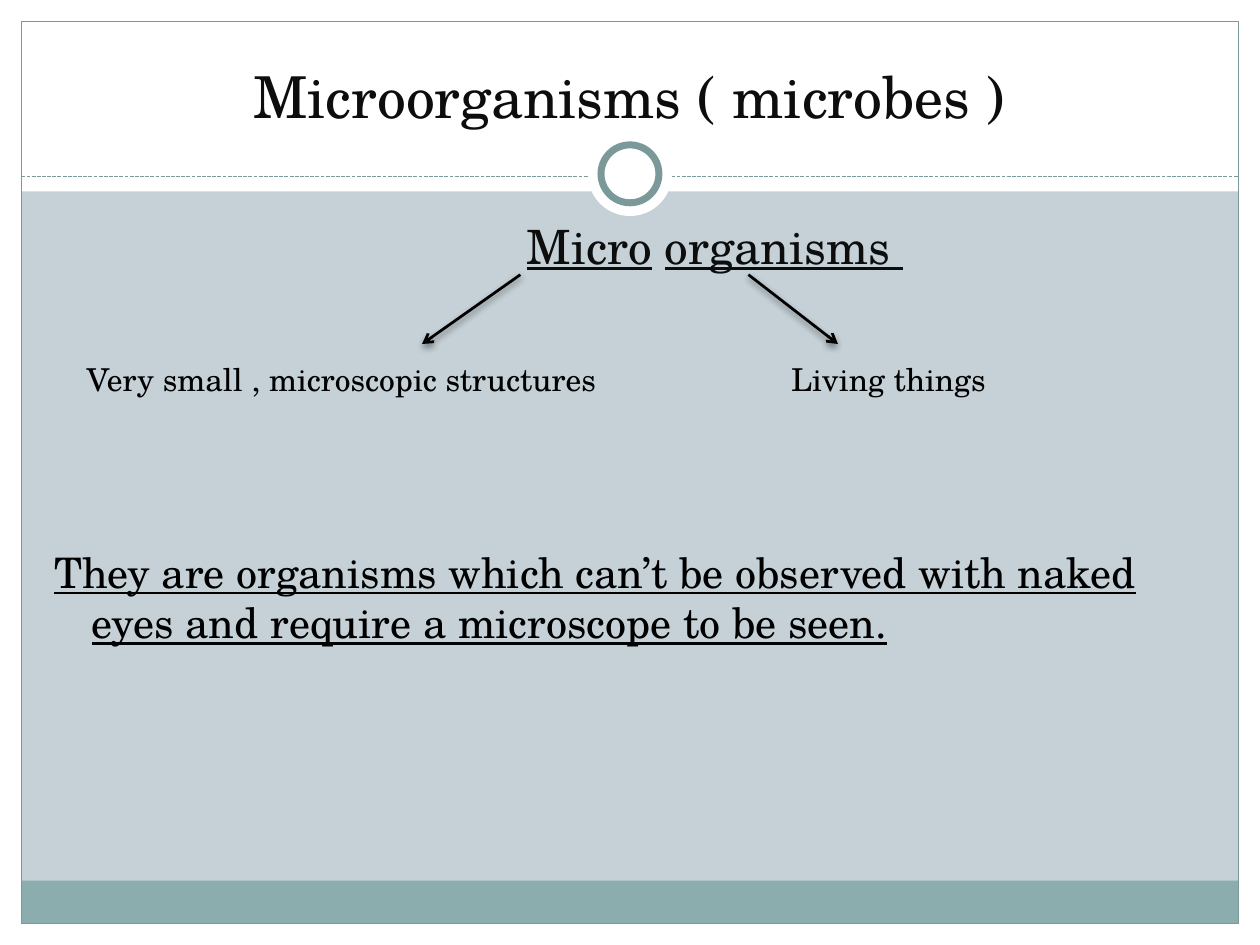
"""Build the slide that explains the word microorganisms."""
import pptx
import pptx.util
import pptx.dml.color
import pptx.enum.dml
import pptx.enum.shapes
import pptx.enum.text
import pptx.oxml
import pptx.oxml.ns

Inches, Pt = pptx.util.Inches, pptx.util.Pt
RGBColor = pptx.dml.color.RGBColor
SHAPE = pptx.enum.shapes.MSO_SHAPE
ANCHOR = pptx.enum.text.MSO_ANCHOR
ALIGN = pptx.enum.text.PP_ALIGN

WHITE = RGBColor(0xFF, 0xFF, 0xFF)
BLACK = RGBColor(0x00, 0x00, 0x00)
INK = RGBColor(0x0D, 0x0D, 0x0D)
SKY = RGBColor(0xC5, 0xD1, 0xD7)
TEAL = RGBColor(0x8C, 0xAD, 0xAE)
EDGE = RGBColor(0x7C, 0x99, 0x9A)
FONT = "TeX Gyre Schola"

WIDTH, HEIGHT, MARGIN = 10, 7.5, 0.17
HEADER, FOOTER, RULE_Y, RING_Y = 1.52, 0.34, 1.4, 1.38
HALO, RING = 0.67, 0.46

TITLE = "Microorganisms ( microbes )"
TITLE_AT = (0.33, 0.25, 9.33, 0.83)
BODY_AT = (0.33, 1.67, 9.3, 5)
# text, underlined
WORD = [("Micro", True), (" ", False), ("organisms ", True)]
DEFINITION = [("They are organisms which can’t be observed with naked eyes "
               "and require a microscope to be seen.", True)]
# runs, size, colour, left margin, first-line indent, space before
BODY = [
    (WORD, 27, INK, 3.75, 0, 0),
    (DEFINITION, 24, BLACK, 0.3, -0.3, 156),
]
# label, left, width, arrow start, arrow end
MEANINGS = [
    ("Very small , microscopic structures", 0.59, 4.33, 4.13, 3.35),
    ("Living things", 6.18, 2.28, 5.94, 6.65),
]
ARROW_TOP, ARROW_BOTTOM, LABEL_TOP, LABEL_HEIGHT = 2.18, 2.73, 2.81, 0.4

NAMESPACE = pptx.oxml.ns.nsdecls("a")
NO_EFFECT = f"<a:effectLst {NAMESPACE}/>"
SHADOW = (f'<a:effectLst {NAMESPACE}><a:outerShdw blurRad="{Pt(4)}" dist="{Pt(2)}" '
          'dir="5400000" rotWithShape="0"><a:srgbClr val="000000">'
          '<a:alpha val="45000"/></a:srgbClr></a:outerShdw></a:effectLst>')
ARROWHEAD = f'<a:tailEnd {NAMESPACE} type="arrow"/>'
NO_BULLET = f"<a:buNone {NAMESPACE}/>"


def add_xml(parent, xml):
    parent.append(pptx.oxml.parse_xml(xml))


def place(box, area):
    box.left, box.top, box.width, box.height = map(Inches, area)


def add_panel(page, kind, area, fill=None, line_width=None):
    panel = page.shapes.add_shape(kind, *map(Inches, area))
    panel.shadow.inherit = False
    if fill is None:
        panel.fill.background()
    else:
        panel.fill.solid()
        panel.fill.fore_color.rgb = fill
    if line_width is None:
        panel.line.fill.background()
    else:
        panel.line.color.rgb = EDGE
        panel.line.width = Pt(line_width)


def add_line(page, start, end, color, width, effect):
    line = page.shapes.add_connector(
        pptx.enum.shapes.MSO_CONNECTOR.STRAIGHT, *map(Inches, start + end))
    line.line.color.rgb = color
    line.line.width = Pt(width)
    add_xml(line._element.spPr, effect)
    return line


def add_span(para, text, size, color, underline=False):
    span = para.add_run()
    span.text = text
    span.font.name = FONT
    span.font.size = Pt(size)
    span.font.color.rgb = color
    span.font.underline = underline


def set_frame(box, anchor):
    frame = box.text_frame
    frame.word_wrap = True
    frame.auto_size = pptx.enum.text.MSO_AUTO_SIZE.NONE
    frame.vertical_anchor = anchor
    return frame


def draw_backdrop(page):
    page.background.fill.solid()
    page.background.fill.fore_color.rgb = SKY
    inner_width, inner_height = WIDTH - 2 * MARGIN, HEIGHT - 2 * MARGIN
    bottom = HEIGHT - MARGIN
    for area in [(0, bottom, WIDTH, MARGIN), (0, 0, WIDTH, HEADER),
                 (0, 0, MARGIN, HEIGHT), (WIDTH - MARGIN, 0, MARGIN, HEIGHT)]:
        add_panel(page, SHAPE.RECTANGLE, area, WHITE)
    add_panel(page, SHAPE.RECTANGLE, (MARGIN, bottom - FOOTER, inner_width, FOOTER), TEAL)
    add_panel(page, SHAPE.RECTANGLE, (MARGIN, MARGIN, inner_width, inner_height), None, 0.75)
    rule = add_line(page, (MARGIN, RULE_Y), (WIDTH - MARGIN, RULE_Y), EDGE, 0.75, NO_EFFECT)
    rule.line.dash_style = pptx.enum.dml.MSO_LINE.SQUARE_DOT
    for size, width in [(HALO, None), (RING, 4)]:
        area = ((WIDTH - size) / 2, RING_Y - size / 2, size, size)
        add_panel(page, SHAPE.OVAL, area, WHITE, width)


def fill_placeholders(page):
    title, body = page.shapes.title, page.placeholders[1]
    for box, area in [(title, TITLE_AT), (body, BODY_AT)]:
        place(box, area)
        page.shapes._spTree.append(box._element)
    para = set_frame(title, ANCHOR.BOTTOM).paragraphs[0]
    para.alignment = ALIGN.CENTER
    add_span(para, TITLE, 33, INK)
    frame = set_frame(body, ANCHOR.TOP)
    for index, (runs, size, color, left, indent, before) in enumerate(BODY):
        para = frame.add_paragraph() if index else frame.paragraphs[0]
        para.space_before = Pt(before)
        properties = para._p.get_or_add_pPr()
        properties.set("marL", str(Inches(left)))
        properties.set("indent", str(Inches(indent)))
        add_xml(properties, NO_BULLET)
        for text, underline in runs:
            add_span(para, text, size, color, underline)


def add_meanings(page):
    for label, left, width, start, end in MEANINGS:
        arrow = add_line(page, (start, ARROW_TOP), (end, ARROW_BOTTOM), BLACK, 1.57, SHADOW)
        add_xml(arrow.line._get_or_add_ln(), ARROWHEAD)
        box = page.shapes.add_textbox(*map(Inches, (left, LABEL_TOP, width, LABEL_HEIGHT)))
        add_span(set_frame(box, ANCHOR.TOP).paragraphs[0], label, 18, BLACK)


def main():
    deck = pptx.Presentation()
    deck.slide_width, deck.slide_height = Inches(WIDTH), Inches(HEIGHT)
    page = deck.slides.add_slide(deck.slide_layouts[1])
    draw_backdrop(page)
    fill_placeholders(page)
    add_meanings(page)
    deck.save("out.pptx")


if __name__ == "__main__":
    main()
